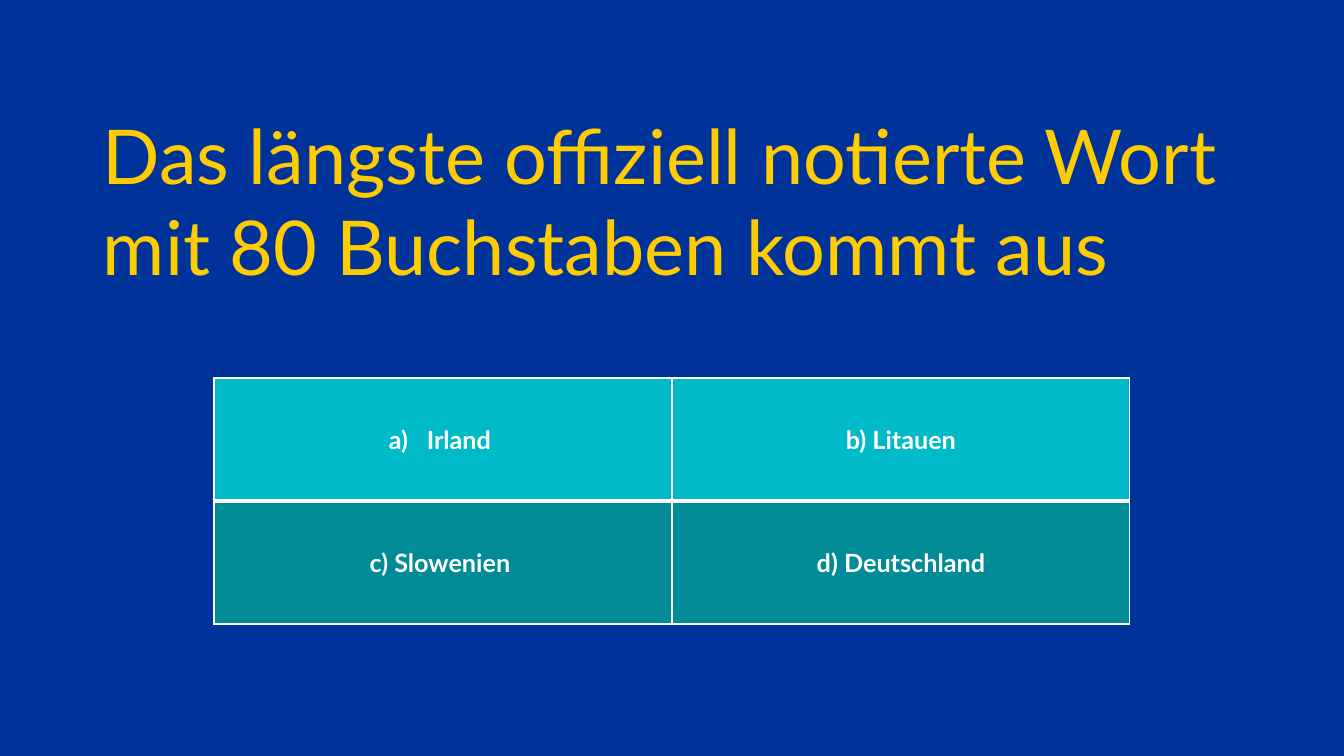
import pptx
import pptx.dml.color
import pptx.enum.text
import pptx.oxml.ns
import pptx.util
from lxml import etree

EMU_PER_PX = 12192000 / 1344
FONT = "Lato"
WHITE = "FFFFFF"
ANSWERS = [["Irland ", "b) Litauen"], ["c) Slowenien ", "d) Deutschland"]]
ROW_FILLS = ["00BAC8", "008B96"]


def px(length):
    """Turn pixels into EMU."""
    return pptx.util.Emu(round(length * EMU_PER_PX))


def color(hex_code):
    """Turn a hex string into a colour."""
    return pptx.dml.color.RGBColor.from_string(hex_code)


def add_element(parent, tag, **attributes):
    """Append a DrawingML element to its parent."""
    return etree.SubElement(parent, pptx.oxml.ns.qn(tag), attributes)


def style_font(paragraph, size, hex_code, bold=False):
    """Set the font of a whole paragraph."""
    font = paragraph.font
    font.name, font.size, font.bold = FONT, pptx.util.Pt(size), bold
    font.color.rgb = color(hex_code)


def add_question(slide, text, left, top, width, height):
    """Add the quiz question as a wrapped heading."""
    frame = slide.shapes.add_textbox(px(left), px(top), px(width), px(height)).text_frame
    frame.word_wrap = True
    frame.vertical_anchor = pptx.enum.text.MSO_ANCHOR.MIDDLE
    question = frame.paragraphs[0]
    question.text = text
    style_font(question, 54, "FFCC00")


def set_borders(cell, widths):
    """Draw white cell borders with widths in points by side."""
    properties = cell._tc.get_or_add_tcPr()
    for side, width in widths.items():
        border = add_element(properties, f"a:ln{side}", w=str(pptx.util.Pt(width)))
        add_element(add_element(border, "a:solidFill"), "a:srgbClr", val=WHITE)


def number_answer(paragraph):
    """Give the answer an automatic letter with a hanging indent."""
    properties = paragraph._p.get_or_add_pPr()
    properties.set("marL", str(px(38)))
    properties.set("indent", str(px(-38)))
    numbering = etree.Element(pptx.oxml.ns.qn("a:buAutoNum"), type="alphaLcParenR")
    properties.insert(0, numbering)


def add_answers(slide, left, top, column_width, row_height):
    """Add the table of possible answers."""
    rows, columns = len(ANSWERS), len(ANSWERS[0])
    table = slide.shapes.add_table(
        rows, columns, px(left), px(top), px(column_width * columns), px(row_height * rows)
    ).table
    for row, (answers, fill) in enumerate(zip(ANSWERS, ROW_FILLS)):
        for column, text in enumerate(answers):
            cell = table.cell(row, column)
            cell.vertical_anchor = pptx.enum.text.MSO_ANCHOR.MIDDLE
            set_borders(cell, {"L": 1, "R": 1, "T": 3 if row else 1, "B": 1 if row else 3})
            cell.fill.solid()
            cell.fill.fore_color.rgb = color(fill)
            answer = cell.text_frame.paragraphs[0]
            answer.text = text
            answer.alignment = pptx.enum.text.PP_ALIGN.CENTER
            style_font(answer, 18, WHITE, bold=True)
    number_answer(table.cell(0, 0).text_frame.paragraphs[0])


def main():
    """Build the quiz slide and save it."""
    presentation = pptx.Presentation()
    presentation.slide_width, presentation.slide_height = px(1344), px(756)
    slide = presentation.slides.add_slide(presentation.slide_layouts[6])
    slide.background.fill.solid()
    slide.background.fill.fore_color.rgb = color("003399")
    add_question(
        slide, "Das längste offiziell notierte Wort mit 80 Buchstaben kommt aus", 93, 40, 1218, 320
    )
    add_answers(slide, 214, 378, 458, 123)
    presentation.save("out.pptx")


if __name__ == "__main__":
    main()
